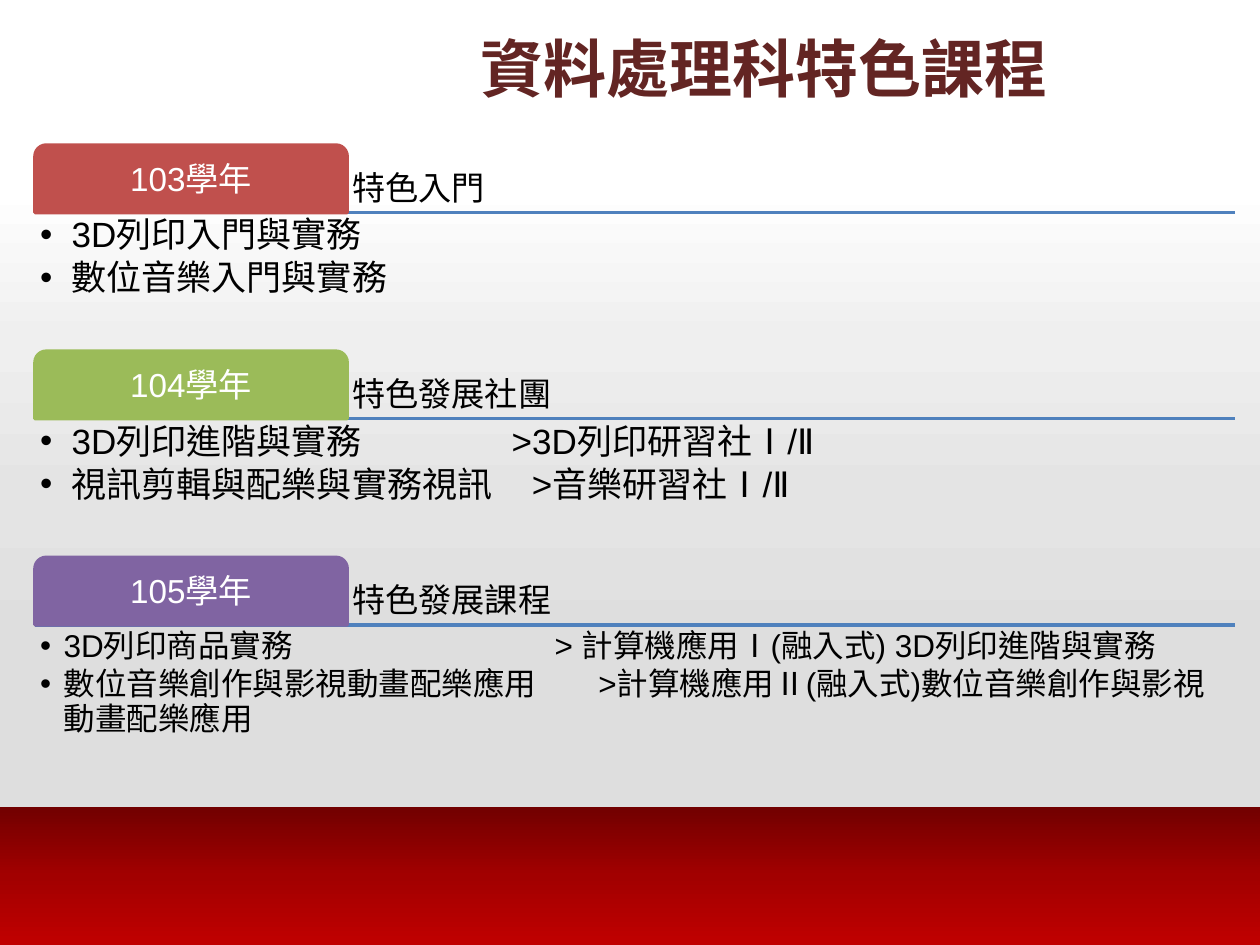
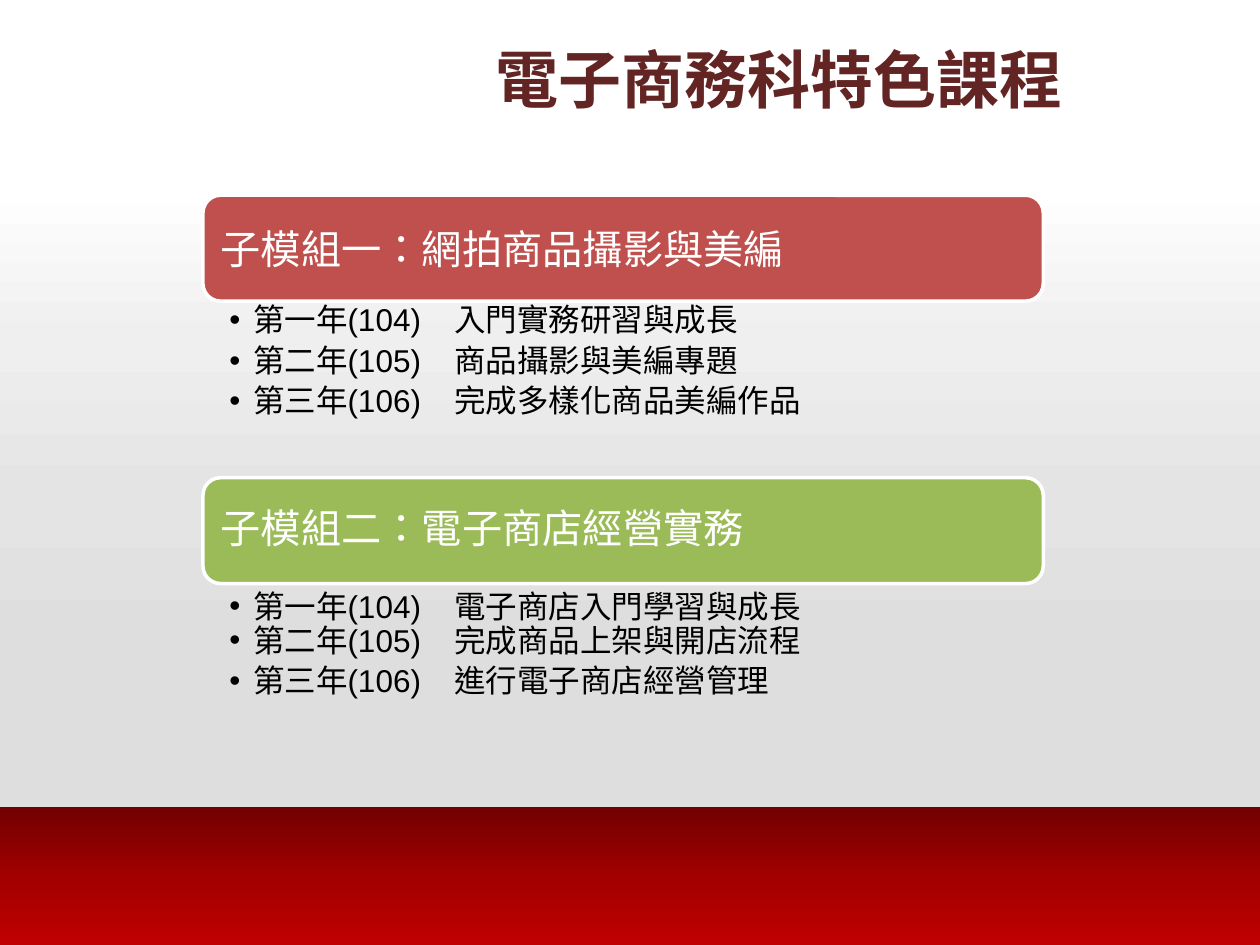
import lxml.etree
import pptx
import pptx.dml.color
import pptx.enum.shapes
import pptx.enum.text
import pptx.oxml.ns
import pptx.util

Pt = pptx.util.Pt
SHAPE = pptx.enum.shapes.MSO_SHAPE
ANCHOR = pptx.enum.text.MSO_ANCHOR
ALIGN = pptx.enum.text.PP_ALIGN
qn = pptx.oxml.ns.qn

WIDTH, HEIGHT = 720, 540
FONT, LANGUAGE = "Arial", "zh-TW"
BLACK, WHITE, MAROON = "000000", "FFFFFF", "632523"
RED, GREEN, PURPLE, BLUE = "C0504D", "9BBB59", "8064A2", "4F81BD"
GREY_BAND = ((0, WHITE), (25, "EFEFEF"), (50, "E4E4E4"), (75, "DEDEDE"), (100, "DDDDDD"))
RED_BAND = ((0, "720000"), (50, "A20000"), (100, "C00000"))

YEARS = (
    ("103學年", "特色入門", RED, 20, 18,
     (("3D列印入門與實務", None), ("數位音樂入門與實務", None))),
    ("104學年", "特色發展社團", GREEN, 20, 18,
     (("3D列印進階與實務\t>3D列印研習社Ⅰ/Ⅱ", 269.5),
      ("視訊剪輯與配樂與實務視訊\t>音樂研習社Ⅰ/Ⅱ", 281))),
    ("105學年", "特色發展課程", PURPLE, 18, 13.5,
     (("3D列印商品實務\t> 計算機應用Ⅰ(融入式) 3D列印進階與實務", 294),
      ("數位音樂創作與影視動畫配樂應用\t>計算機應用Ⅱ(融入式)數位音樂創作與影視動畫配樂應用", 319))),
)
MODULES = (
    ("子模組一：網拍商品攝影與美編", RED, 1, 0.9, 3.6,
     ("第一年(104)\t入門實務研習與成長", "第二年(105)\t商品攝影與美編專題",
      "第三年(106)\t完成多樣化商品美編作品")),
    ("子模組二：電子商店經營實務", GREEN, 0.9, 1, 0,
     ("第一年(104)\t電子商店入門學習與成長", "第二年(105)\t完成商品上架與開店流程",
      "第三年(106)\t進行電子商店經營管理")),
)


def color(value):
    """Turn a hex string into a colour."""
    return pptx.dml.color.RGBColor.from_string(value)


def place(shape, left, top, width, height):
    """Move and size a shape, in points."""
    shape.left, shape.top = Pt(left), Pt(top)
    shape.width, shape.height = Pt(width), Pt(height)


def set_frame(shape, anchor, insets):
    """Set wrapping, anchor and insets, and return the text frame."""
    frame = shape.text_frame
    frame.word_wrap = True
    frame.auto_size = pptx.enum.text.MSO_AUTO_SIZE.NONE
    frame.vertical_anchor = anchor
    (frame.margin_left, frame.margin_top,
     frame.margin_right, frame.margin_bottom) = map(Pt, insets)
    return frame


def write(para, text, size, shade, bold=False):
    """Add one formatted run."""
    span = para.add_run()
    span.text = text
    span.font.name, span.font.size, span.font.bold = FONT, Pt(size), bold
    span.font.color.rgb = color(shade)
    span._r.get_or_add_rPr().set("lang", LANGUAGE)


def write_label(shape, text, size, shade, align, anchor, inset, spacing=0.9):
    """Write one line of text into a shape."""
    para = set_frame(shape, anchor, [inset] * 4).paragraphs[0]
    para.alignment, para.line_spacing = align, spacing
    write(para, text, size, shade)


def add_bullet(para, indent, tab):
    """Give a paragraph a hanging bullet and an optional tab stop."""
    props = para._p.get_or_add_pPr()
    props.set("marL", str(Pt(indent)))
    props.set("indent", str(-Pt(indent)))
    lxml.etree.SubElement(props, qn("a:buFont")).set("typeface", FONT)
    lxml.etree.SubElement(props, qn("a:buChar")).set("char", "•")
    if tab:
        stops = lxml.etree.SubElement(props, qn("a:tabLst"))
        stop = lxml.etree.SubElement(stops, qn("a:tab"))
        stop.set("pos", str(Pt(tab)))
        stop.set("algn", "l")


def fill_list(body, items, size, indent, after, insets, first=(0.9, None)):
    """Fill a body placeholder; first holds spacing and gap of the first item."""
    frame = set_frame(body, ANCHOR.TOP, insets)
    for number, (text, tab) in enumerate(items):
        para = frame.paragraphs[0] if number == 0 else frame.add_paragraph()
        add_bullet(para, indent, tab)
        spacing, gap = first if number == 0 else (0.9, None)
        para.alignment, para.line_spacing = ALIGN.LEFT, spacing
        para.space_before = Pt(0)
        para.space_after = Pt(after if gap is None else gap)
        write(para, text, size, BLACK)


def add_block(page, kind, box, fill, line=None):
    """Add a filled preset shape with an optional outline."""
    shape = page.shapes.add_shape(kind, *map(Pt, box))
    shape.shadow.inherit = False
    shape.fill.solid()
    shape.fill.fore_color.rgb = color(fill)
    if line:
        shape.line.color.rgb = color(line)
        shape.line.width = Pt(2)
    else:
        shape.line.fill.background()
    return shape


def add_band(page, top, height, stops):
    """Add a full-width band, behind all else, that shades downwards."""
    band = add_block(page, SHAPE.RECTANGLE, (0, top, WIDTH, height), WHITE)
    band.fill.gradient()
    gradient = band._element.spPr.find(qn("a:gradFill"))
    stop_list = gradient.find(qn("a:gsLst"))
    for stop in list(stop_list):
        stop_list.remove(stop)
    for position, shade in stops:
        stop = lxml.etree.SubElement(stop_list, qn("a:gs"))
        stop.set("pos", str(position * 1000))
        lxml.etree.SubElement(stop, qn("a:srgbClr")).set("val", shade)
    gradient.find(qn("a:lin")).set("ang", "5400000")
    band._element.getparent().insert(2, band._element)


def add_page(deck, layout, title, box):
    """Add a slide with its bands and title."""
    page = deck.slides.add_slide(deck.slide_layouts[layout])
    add_band(page, 461.3, HEIGHT - 461.3, RED_BAND)
    add_band(page, 105.8, 355.7, GREY_BAND)
    heading = page.shapes.title
    place(heading, *box)
    para = set_frame(heading, ANCHOR.MIDDLE, (7.2, 3.6, 7.2, 3.6)).paragraphs[0]
    para.alignment = ALIGN.CENTER
    write(para, title, 36, MAROON, True)
    return page


def body_placeholders(page, count):
    """Return the first body placeholders and remove the others."""
    bodies = [item for item in page.placeholders if item.placeholder_format.idx > 0]
    for spare in bodies[count:]:
        spare._element.getparent().remove(spare._element)
    return bodies[:count]


def add_year(page, body, left, top, width, year):
    """Place a year tab, its heading, rule and course list."""
    name, heading, shade, size, indent, items = year
    tab_width, tab_height = 178.4, 38.6
    base = top + tab_height
    rule = page.shapes.add_connector(
        pptx.enum.shapes.MSO_CONNECTOR.STRAIGHT,
        Pt(left), Pt(base), Pt(left + width), Pt(base))
    rule.line.color.rgb, rule.line.width = color(BLUE), Pt(2)
    lxml.etree.SubElement(rule._element.spPr, qn("a:effectLst"))
    label = page.shapes.add_textbox(
        Pt(left + tab_width), Pt(top), Pt(width - tab_width), Pt(tab_height))
    write_label(label, heading, 19, BLACK, ALIGN.LEFT, ANCHOR.BOTTOM, 2.9)
    tab = add_block(page, SHAPE.ROUND_2_SAME_RECTANGLE,
                    (left, top, tab_width, tab_height), shade, shade)
    write_label(tab, name, 19, WHITE, ALIGN.CENTER, ANCHOR.MIDDLE, 2.9)
    place(body, left, base, width, 77)
    fill_list(body, items, size, indent, size * 0.15, [2.9] * 4)


def add_module(page, body, left, top, width, module):
    """Place a module banner and its list of years."""
    name, shade, name_spacing, spacing, gap, lines = module
    height = 60.5
    banner = add_block(page, SHAPE.ROUNDED_RECTANGLE,
                       (left, top, width, height), shade, WHITE)
    write_label(banner, name, 23, WHITE, ALIGN.LEFT, ANCHOR.MIDDLE, 7.2, name_spacing)
    place(body, left, top + height, width, 100)
    fill_list(body, [(line, 128.4) for line in lines], 18, 13.5, 3.6,
              (15.1, 2, 12, 2), (spacing, gap))


def main():
    """Build both slides and save the deck."""
    deck = pptx.Presentation()
    deck.slide_width, deck.slide_height = Pt(WIDTH), Pt(HEIGHT)
    page = add_page(deck, 4, "資料處理科特色課程", (244.4, 13.7, 384.5, 49.7))
    for number, body in enumerate(body_placeholders(page, len(YEARS))):
        add_year(page, body, 20, 82.9 + 117.8 * number, 685.8, YEARS[number])
    page = add_page(deck, 3, "電子商務科特色課程", (195.1, 20, 499.7, 49.7))
    for number, body in enumerate(body_placeholders(page, len(MODULES))):
        add_module(page, body, 116, 111.6 + 161.4 * number, 480.2, MODULES[number])
    deck.save("out.pptx")


if __name__ == "__main__":
    main()
